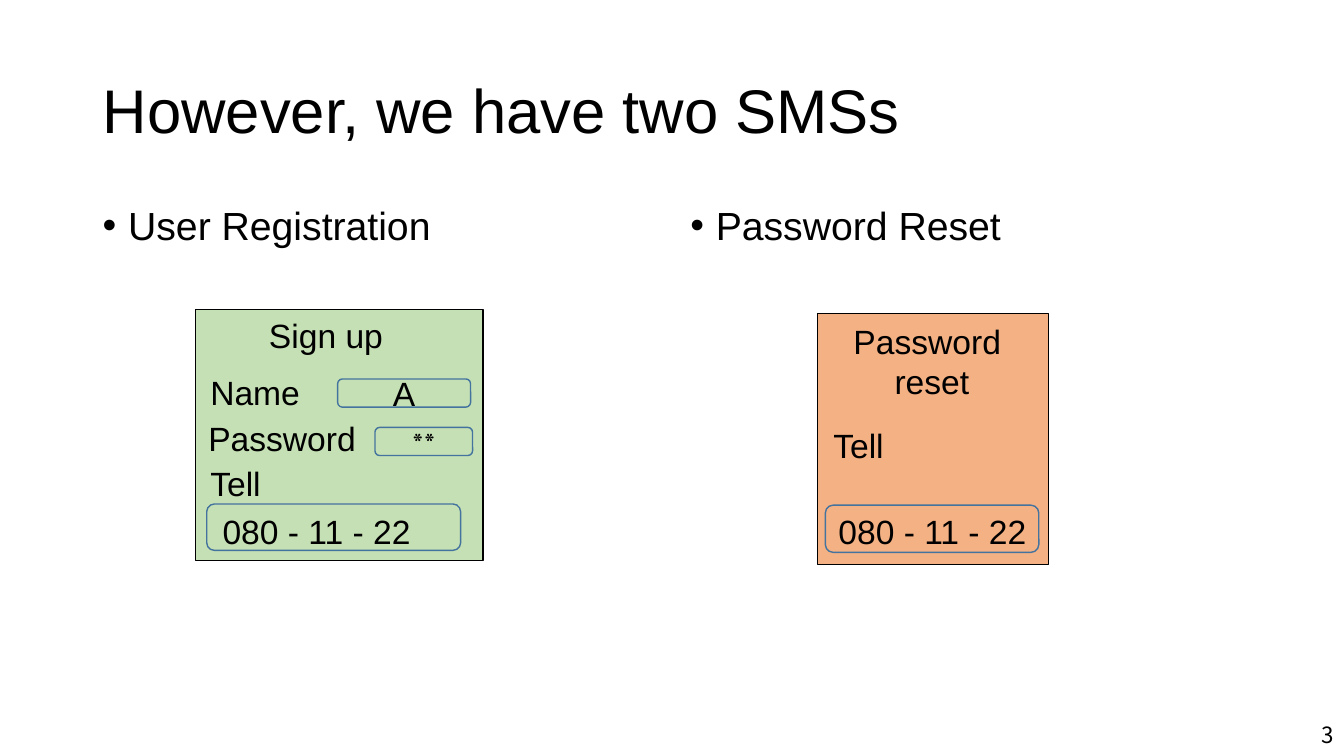
from lxml import etree
from pptx import Presentation
from pptx import util as u
from pptx.dml import color
from pptx.enum import shapes, text
from pptx.oxml import ns

BLACK = "000000"
GREEN = "C5E0B4"
ORANGE = "F4B183"
BLUE = "43739E"
PHONE = "080 - 11 - 22"
LABEL_HEIGHT = 1.27
FIELD_HEIGHT = 0.71


def rgb(value):
    return color.RGBColor.from_string(value)


def box(*lengths):
    return [u.Cm(length) for length in lengths]


def write(shape, lines, size=24, font="Arial", align=text.PP_ALIGN.LEFT,
          anchor=text.MSO_ANCHOR.TOP):
    frame = shape.text_frame
    frame.word_wrap = True
    frame.vertical_anchor = anchor
    for index, line in enumerate(lines):
        paragraph = frame.add_paragraph() if index else frame.paragraphs[0]
        paragraph.alignment = align
        run = paragraph.add_run()
        run.text = line
        run.font.size = u.Pt(size)
        run.font.name = font
        run.font.color.rgb = rgb(BLACK)
        properties = run._r.get_or_add_rPr()
        etree.SubElement(properties, ns.qn("a:ea")).set("typeface", font)
    return frame.paragraphs[0]


def add_text(slide, place, line, **style):
    return write(slide.shapes.add_textbox(*box(*place)), [line], **style)


def add_heading(slide, left, line):
    paragraph = add_text(slide, (left, 5.08, 14.4, 12.09), line, size=28)
    paragraph.line_spacing = 0.9
    paragraph.space_before = u.Pt(10)
    properties = paragraph._p.get_or_add_pPr()
    properties.set("marL", str(u.Cm(0.64)))
    properties.set("indent", str(-u.Cm(0.64)))
    etree.SubElement(properties, ns.qn("a:buFont")).set("typeface", "Arial")
    etree.SubElement(properties, ns.qn("a:buChar")).set("char", "•")


def add_box(group, place, fill=None, line=None, rounded=False):
    kind = shapes.MSO_SHAPE.ROUNDED_RECTANGLE if rounded else shapes.MSO_SHAPE.RECTANGLE
    shape = group.shapes.add_shape(kind, *box(*place))
    shape.shadow.inherit = False
    if fill:
        shape.fill.solid()
        shape.fill.fore_color.rgb = rgb(fill)
    else:
        shape.fill.background()
    if line:
        shape.line.color.rgb = rgb(line)
        shape.line.width = u.Pt(1)
    else:
        shape.line.fill.background()
    return shape


def add_label(group, fill, left, top, width, *lines, height=LABEL_HEIGHT, **style):
    write(add_box(group, (left, top, width, height), fill), lines, **style)


def add_field(group, fill, left, top, width, value, **style):
    shape = add_box(group, (left, top, width, FIELD_HEIGHT), fill, BLUE, True)
    write(shape, [value], align=text.PP_ALIGN.CENTER,
          anchor=text.MSO_ANCHOR.MIDDLE, **style)


def add_sign_up(slide):
    group = slide.shapes.add_group_shape()
    add_box(group, (4.93, 7.8, 7.24, 6.32), GREEN, BLACK)
    add_label(group, GREEN, 6.53, 7.82, 4.19, "Sign up")
    add_label(group, GREEN, 5.05, 9.25, 3.68, "Name")
    add_label(group, GREEN, 5, 10.41, 4.9, "Password")
    add_label(group, GREEN, 5.05, 11.53, 2.06, "Tell")
    add_field(group, GREEN, 8.51, 9.55, 3.35, "A")
    add_field(group, GREEN, 9.45, 10.77, 2.46, "**", size=20, font="Cambria")
    add_label(group, GREEN, 5.36, 12.75, 5.84, PHONE)
    add_box(group, (5.21, 12.7, 6.4, 1.17), line=BLUE, rounded=True)


def add_password_reset(slide):
    group = slide.shapes.add_group_shape()
    add_box(group, (20.6, 7.9, 5.82, 6.32), ORANGE, BLACK)
    add_label(group, ORANGE, 21.06, 7.95, 4.85, "Password ", "reset",
              height=2.31, align=text.PP_ALIGN.CENTER)
    add_label(group, ORANGE, 20.75, 10.57, 1.93, "Tell")
    add_label(group, ORANGE, 20.88, 12.75, 5.38, PHONE)
    add_box(group, (20.8, 12.73, 5.38, 1.19), line=BLUE, rounded=True)


def main():
    presentation = Presentation()
    presentation.slide_width, presentation.slide_height = box(33.87, 19.05)
    slide = presentation.slides.add_slide(presentation.slide_layouts[6])
    title = add_text(slide, (2.34, 1.02, 29.21, 3.68), "However, we have two SMSs",
                     size=44, anchor=text.MSO_ANCHOR.MIDDLE)
    title.line_spacing = 0.9
    add_heading(slide, 2.34, "User Registration")
    add_heading(slide, 17.15, "Password Reset")
    add_sign_up(slide)
    add_password_reset(slide)
    add_text(slide, (26.24, 18.01, 7.62, 1.02), "3", size=16, font="Noto Sans CJK JP",
             align=text.PP_ALIGN.RIGHT, anchor=text.MSO_ANCHOR.MIDDLE)
    presentation.save("out.pptx")


if __name__ == "__main__":
    main()
